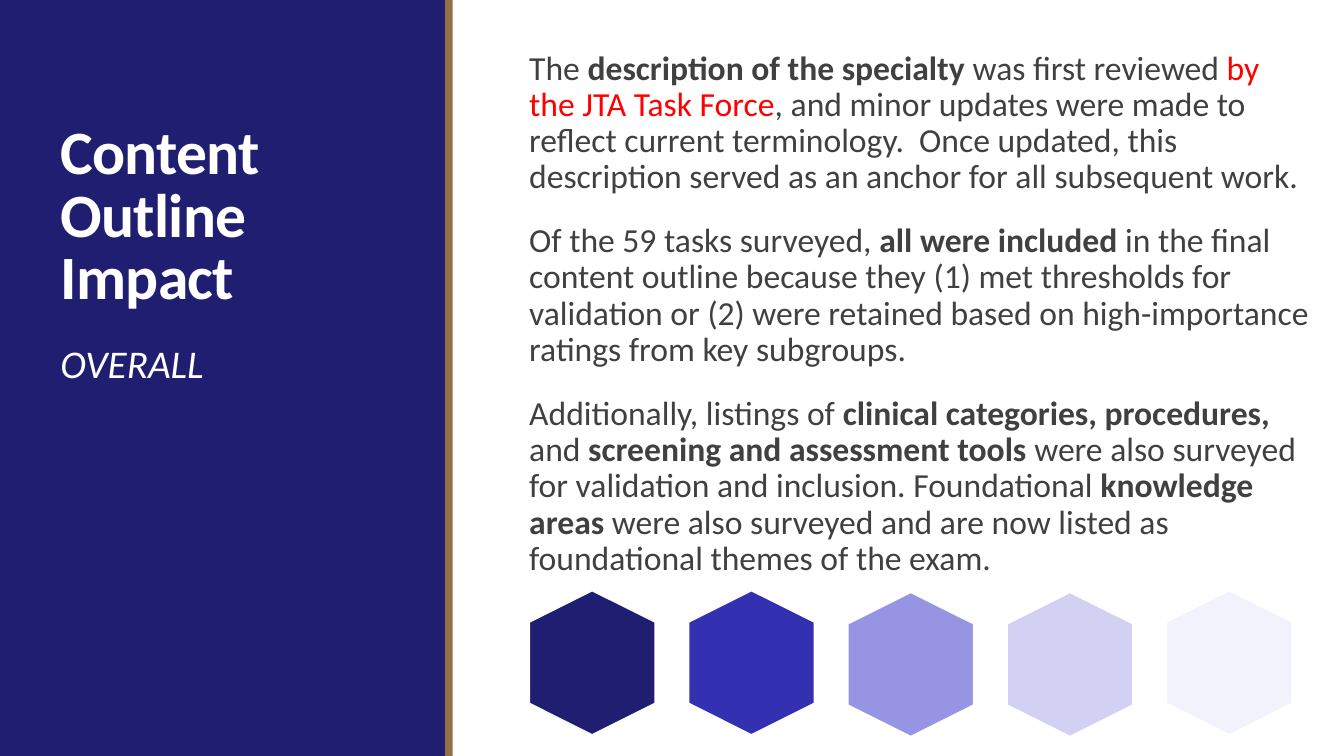
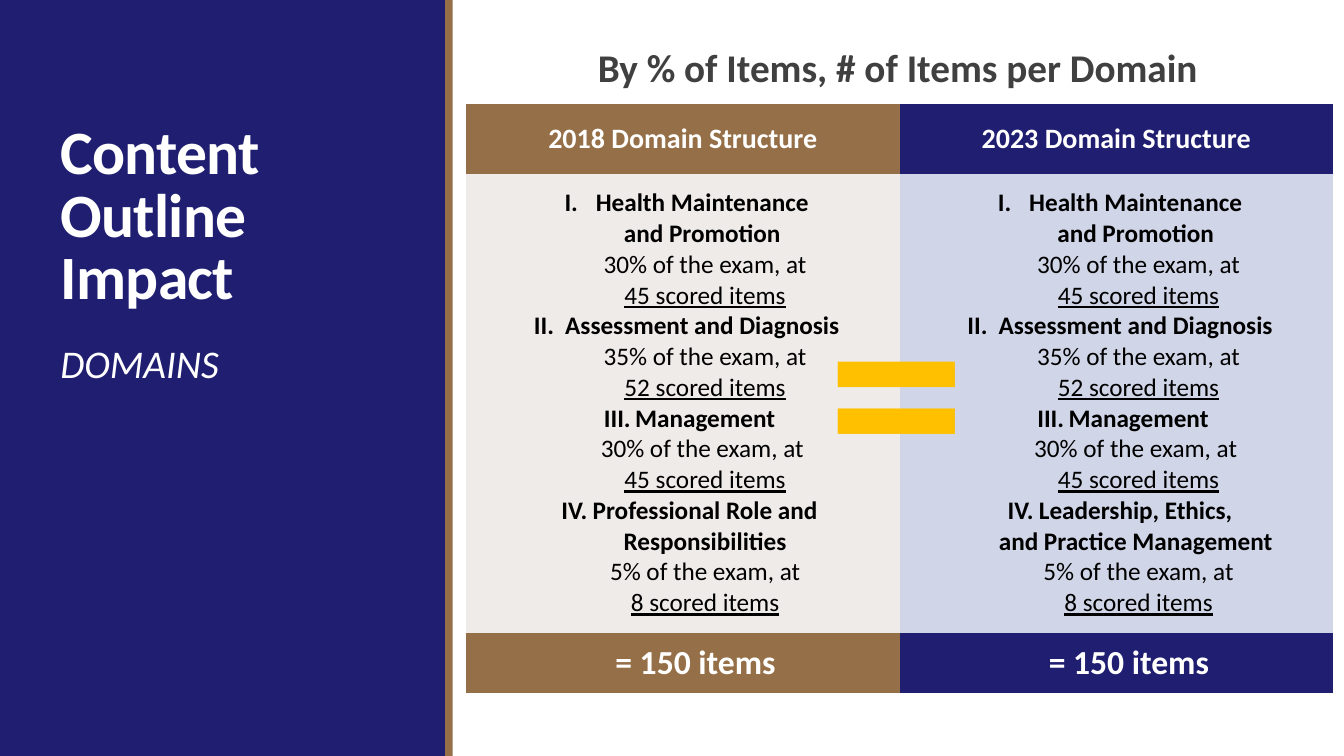
from dataclasses import dataclass

from lxml.etree import SubElement
from pptx import Presentation
from pptx.dml.color import RGBColor
from pptx.enum.shapes import MSO_SHAPE as Preset
from pptx.enum.text import MSO_ANCHOR as Anchor, MSO_AUTO_SIZE as AutoSize, PP_ALIGN as Align
from pptx.oxml.ns import qn
from pptx.util import Inches, Pt


@dataclass(frozen=True)
class Theme:
    """Colours, type sizes and font of the deck."""
    font: str = "Calibri"
    navy: str = "201E70"
    bronze: str = "956F47"
    white: str = "FFFFFF"
    black: str = "000000"
    gray: str = "404040"
    red: str = "FF0000"
    gold: str = "FFC000"
    sand: str = "EFEBE9"
    mist: str = "D0D5E7"
    hexagons: tuple = ("201E70", "3330B2", "9795E3", "D2D1F3", "F2F2FC")
    title: int = 44
    heading: int = 28
    body: int = 24
    table_head: int = 20
    table_body: int = 18
    equals: int = 199


THEME = Theme()
WIDTH, HEIGHT = Inches(13.33), Inches(7.5)
COLUMNS, ROWS = 160, 90
NO_STYLE = "{2D5ABB26-0587-4C30-8999-92F81FD0307C}"
BOLD = {"bold": True}
UNDERLINE = {"underline": True}

OVERALL_TEXT = [
    [("The ", {}), ("description of the specialty ", BOLD), ("was first reviewed ", {}),
     ("by the JTA Task Force", {"color": THEME.red}),
     (", and minor updates were made to reflect current terminology.  Once updated, this "
      "description served as an anchor for all subsequent work.", {})],
    [("Of the 59 tasks surveyed, ", {}), ("all were included ", BOLD),
     ("in the final content outline because they (1) met thresholds for validation or (2) were "
      "retained based on high-importance ratings from key subgroups.", {})],
    [("Additionally, listings of ", {}), ("clinical categories, procedures, ", BOLD),
     ("and", {}), (" screening and assessment tools ", BOLD),
     ("were also surveyed for validation and inclusion. Foundational ", {}),
     ("knowledge areas", BOLD),
     (" were also surveyed and are now listed as foundational themes of the exam.", {})],
]

SHARED_DOMAINS = [
    ("Health Maintenance \nand Promotion \n", "30% of the exam, at\n", "45 scored items"),
    ("Assessment and Diagnosis \n", "35% of the exam, at\n", "52 scored items"),
    ("Management\n", "30% of the exam, at \n", "45 scored items"),
]
LAST_DOMAINS = {
    "2018": "Professional Role and Responsibilities\n",
    "2023": "Leadership, Ethics, \nand Practice Management \n",
}


def across(columns):
    """Turn grid columns into a length."""
    return int(WIDTH * columns / COLUMNS)


def down(rows):
    """Turn grid rows into a length."""
    return int(HEIGHT * rows / ROWS)


def box(left, top, width, height):
    """Turn a grid box into slide lengths."""
    return across(left), down(top), across(width), down(height)


class Deck:
    """Holds the style and the current slide."""

    def __init__(self, theme):
        """Open a blank wide presentation."""
        self.theme = theme
        self.presentation = Presentation()
        self.presentation.slide_width = WIDTH
        self.presentation.slide_height = HEIGHT
        self.layout = self.presentation.slide_layouts[5]
        self.slide = None

    def add_slide(self, title, subtitle):
        """Start a slide with its title and subtitle in the side panel."""
        self.slide = self.presentation.slides.add_slide(self.layout)
        if len(self.presentation.slides) == 1:
            self.add_sidebar()
        shape = self.slide.shapes.title
        shape.left, shape.top, shape.width, shape.height = box(6, 7.8, 42, 30)
        frame = shape.text_frame
        frame.word_wrap, frame.auto_size = True, AutoSize.NONE
        frame.vertical_anchor = Anchor.BOTTOM
        paragraph = frame.paragraphs[0]
        paragraph.alignment, paragraph.line_spacing = Align.LEFT, 0.85
        self.add_runs(paragraph, [(title, {**BOLD, "spacing": -50})],
                      self.theme.title, self.theme.white)
        self.add_text((6, 40.4, 42, 42.4), [[(subtitle, {"italic": True})]],
                      self.theme.heading, self.theme.white, line_spacing=0.9)

    def add_sidebar(self):
        """Place the side panel and its edge on the shared layout."""
        bands = [((53, 0, 0.9, ROWS), self.theme.bronze), ((0, 0, 53.2, ROWS), self.theme.navy)]
        for number, (place, color) in enumerate(bands, 101):
            element = self.add_shape(Preset.RECTANGLE, place, color)._element
            element.nvSpPr.cNvPr.set("id", str(number))
            self.layout.shapes._spTree.insert(2, element)

    def add_shape(self, preset, place, color, line=None):
        """Add a filled shape, outlined when a line colour is given."""
        shape = self.slide.shapes.add_shape(preset, *box(*place))
        shape.shadow.inherit = False
        shape.fill.solid()
        shape.fill.fore_color.rgb = RGBColor.from_string(color)
        if line:
            shape.line.color.rgb = RGBColor.from_string(line)
            shape.line.width = Pt(1.25)
        else:
            shape.line.fill.background()
        return shape

    def add_runs(self, paragraph, runs, size, color):
        """Add styled runs, with a line break at each newline."""
        for text, style in runs:
            for index, part in enumerate(text.split("\n")):
                if index:
                    paragraph.add_line_break()
                if not part:
                    continue
                run = paragraph.add_run()
                run.text = part
                font = run.font
                font.name, font.size = self.theme.font, Pt(size)
                font.bold = style.get("bold", False)
                font.italic = style.get("italic", False)
                font.underline = style.get("underline", False)
                font.color.rgb = RGBColor.from_string(style.get("color", color))
                if "spacing" in style:
                    run._r.get_or_add_rPr().set("spc", str(style["spacing"]))

    def add_text(self, place, paragraphs, size, color, align=Align.LEFT,
                 line_spacing=1.0, gap=0, side_inset=0.1):
        """Add a wrapped text box, one list of runs per paragraph."""
        frame = self.slide.shapes.add_textbox(*box(*place)).text_frame
        frame.word_wrap = True
        frame.margin_left = frame.margin_right = Inches(side_inset)
        for index, runs in enumerate(paragraphs):
            paragraph = frame.add_paragraph() if index else frame.paragraphs[0]
            paragraph.alignment, paragraph.line_spacing = align, line_spacing
            paragraph.space_after = Pt(gap)
            self.add_runs(paragraph, runs, size, color)

    def add_hexagons(self, center, middle, step, drops):
        """Add a row of upright hexagons at equal steps."""
        width, height = 17.2, 15
        for index, (color, drop) in enumerate(zip(self.theme.hexagons, drops)):
            place = (center + index * step - width / 2, middle + drop - height / 2, width, height)
            shape = self.add_shape(Preset.HEXAGON, place, color, self.theme.white)
            shape.rotation = 90

    def add_table(self, place, row_heights):
        """Add an unstyled two-column table."""
        shape = self.slide.shapes.add_table(len(row_heights), 2, *box(*place))
        table = shape.table
        table.first_row = table.horz_banding = False
        table._tbl.tblPr.find(qn("a:tableStyleId")).text = NO_STYLE
        for row, height in zip(table.rows, row_heights):
            row.height = down(height)
        return table

    def fill_cell(self, cell, fill, paragraphs, size, color, margin=0.07,
                  indent=(0, 0), numbered=False):
        """Fill a cell with centred, optionally numbered paragraphs."""
        cell.fill.solid()
        cell.fill.fore_color.rgb = RGBColor.from_string(fill)
        cell.vertical_anchor = Anchor.MIDDLE
        cell.margin_left = cell.margin_right = Inches(margin)
        cell.margin_top = cell.margin_bottom = 0
        frame = cell.text_frame
        for index, runs in enumerate(paragraphs):
            paragraph = frame.add_paragraph() if index else frame.paragraphs[0]
            paragraph.alignment = Align.CENTER
            properties = paragraph._p.get_or_add_pPr()
            for name, length in zip(("marL", "indent"), indent):
                properties.set(name, str(Inches(length)))
            if numbered:
                SubElement(properties, qn("a:buAutoNum"), type="romanUcPeriod")
            self.add_runs(paragraph, runs, size, color)


def build_overall(deck):
    """Build the slide on the overall impact."""
    theme = deck.theme
    deck.add_slide("Content Outline Impact", "OVERALL")
    deck.add_text((63, 5.5, 92.9, 65.8), OVERALL_TEXT, theme.body, theme.gray,
                  line_spacing=0.9, gap=19.6, side_inset=0)
    deck.add_hexagons(70.5, 78.9, 18.96, (0, 0, 0.2, 0.2, 0))


def build_domains(deck):
    """Build the slide that compares the domain structures."""
    theme = deck.theme
    deck.add_slide("Content Outline Impact", "DOMAINS")
    table = deck.add_table((55.5, 12.4, 103.2, 70.1), (8.3, 54.6, 7.2))
    fills = [(theme.bronze, theme.sand), (theme.navy, theme.mist)]
    for column, (year, last) in enumerate(LAST_DOMAINS.items()):
        strong, pale = fills[column]
        domains = SHARED_DOMAINS + [(last, "5% of the exam, at\n", "8 scored items")]
        outline = [[(name, BOLD), (share, {}), (items, UNDERLINE)]
                   for name, share, items in domains]
        deck.fill_cell(table.cell(0, column), strong, [[(f"{year} Domain Structure", BOLD)]],
                       theme.table_head, theme.white, margin=0.01)
        deck.fill_cell(table.cell(1, column), pale, outline, theme.table_body, theme.black,
                       indent=(0.44, -0.31), numbered=True)
        deck.fill_cell(table.cell(2, column), strong, [[("= 150 items", BOLD)]],
                       theme.body, theme.white, indent=(0.25, 0))
    deck.add_text((60.4, 5.6, 92.9, 5.9), [[("By % of Items, # of Items per Domain", BOLD)]],
                  theme.heading, theme.gray, align=Align.CENTER, line_spacing=0.8, side_inset=0)
    deck.add_text((97.3, 24.2, 18.7, 41.4), [[("=", BOLD)]], theme.equals, theme.gold)


def main():
    """Build and save the deck."""
    deck = Deck(THEME)
    build_overall(deck)
    build_domains(deck)
    deck.presentation.save("out.pptx")


if __name__ == "__main__":
    main()
